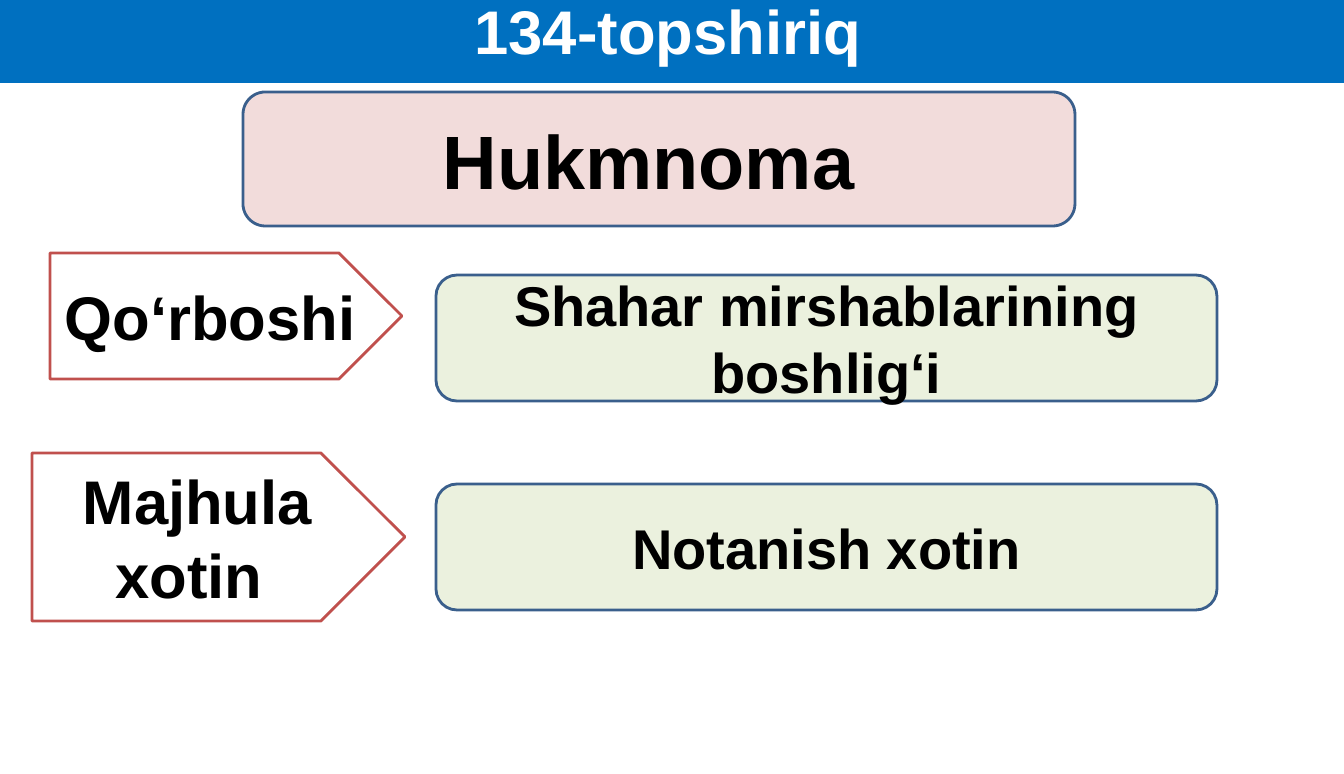
from typing import NamedTuple

from pptx import Presentation
from pptx.dml.color import RGBColor
from pptx.enum.shapes import MSO_SHAPE
from pptx.enum.text import MSO_ANCHOR, PP_ALIGN
from pptx.util import Emu, Pt

RECTANGLE = MSO_SHAPE.RECTANGLE
ROUNDED = MSO_SHAPE.ROUNDED_RECTANGLE
PENTAGON = MSO_SHAPE.PENTAGON
MIDDLE = MSO_ANCHOR.MIDDLE
CENTER = PP_ALIGN.CENTER

FONT = "Arial"
PX_PER_INCH = 100.8
COLORS = {
    "banner": "0070C0",
    "heading": "F2DCDB",
    "term": "FFFFFF",
    "meaning": "EBF1DE",
    "blue line": "3A5F8C",
    "red line": "C0504D",
    "title text": "FFFFFF",
    "text": "000000",
}


class Style(NamedTuple):
    preset: MSO_SHAPE
    fill: str
    line: str
    size: int


class Card(NamedTuple):
    text: str
    left: int
    top: int
    width: int
    height: int
    style: Style


HEADING = Style(ROUNDED, "heading", "blue line", 54)
TERM = Style(PENTAGON, "term", "red line", 44)
MEANING = Style(ROUNDED, "meaning", "blue line", 40)

CARDS = [
    Card("Hukmnoma ", 243, 92, 832, 134, HEADING),
    Card("Qo‘rboshi", 50, 253, 352, 126, TERM),
    Card("Majhula xotin ", 32, 453, 373, 168, TERM),
    Card("Shahar mirshablarining boshlig‘i", 436, 275, 781, 126, MEANING),
    Card("Notanish xotin", 436, 484, 781, 126, MEANING),
]


def px(length: int) -> Emu:
    return Emu(round(length * 914400 / PX_PER_INCH))


def color(name: str) -> RGBColor:
    return RGBColor.from_string(COLORS[name])


def add_words(paragraph, text: str, size: int, color_name: str) -> None:
    paragraph.alignment = CENTER
    run = paragraph.add_run()
    run.text = text
    run.font.name = FONT
    run.font.size = Pt(size)
    run.font.bold = True
    run.font.color.rgb = color(color_name)


def add_filled(slide, preset: MSO_SHAPE, box: tuple[int, int, int, int], fill: str):
    shape = slide.shapes.add_shape(preset, *map(px, box))
    shape.shadow.inherit = False
    shape.fill.solid()
    shape.fill.fore_color.rgb = color(fill)
    return shape


def add_title(slide, text: str) -> None:
    banner = add_filled(slide, RECTANGLE, (-2, -15, 1346, 98), "banner")
    banner.line.fill.background()
    title = slide.shapes.add_textbox(px(-2), px(-9), px(1340), px(77))
    frame = title.text_frame
    frame.word_wrap = True
    frame.margin_left = frame.margin_right = frame.margin_bottom = 0
    frame.margin_top = px(2)
    paragraph = frame.paragraphs[0]
    paragraph.space_before = Pt(1.5)
    add_words(paragraph, text, 44, "title text")


def add_card(slide, card: Card) -> None:
    style = card.style
    box = (card.left, card.top, card.width, card.height)
    shape = add_filled(slide, style.preset, box, style.fill)
    shape.line.color.rgb = color(style.line)
    shape.line.width = Pt(2)
    frame = shape.text_frame
    frame.word_wrap = True
    frame.vertical_anchor = MIDDLE
    add_words(frame.paragraphs[0], card.text, style.size, "text")


def main() -> None:
    deck = Presentation()
    deck.slide_width, deck.slide_height = px(1344), px(774)
    slide = deck.slides.add_slide(deck.slide_layouts[6])
    add_title(slide, "134-topshiriq")
    for card in CARDS:
        add_card(slide, card)
    deck.save("out.pptx")


if __name__ == "__main__":
    main()
